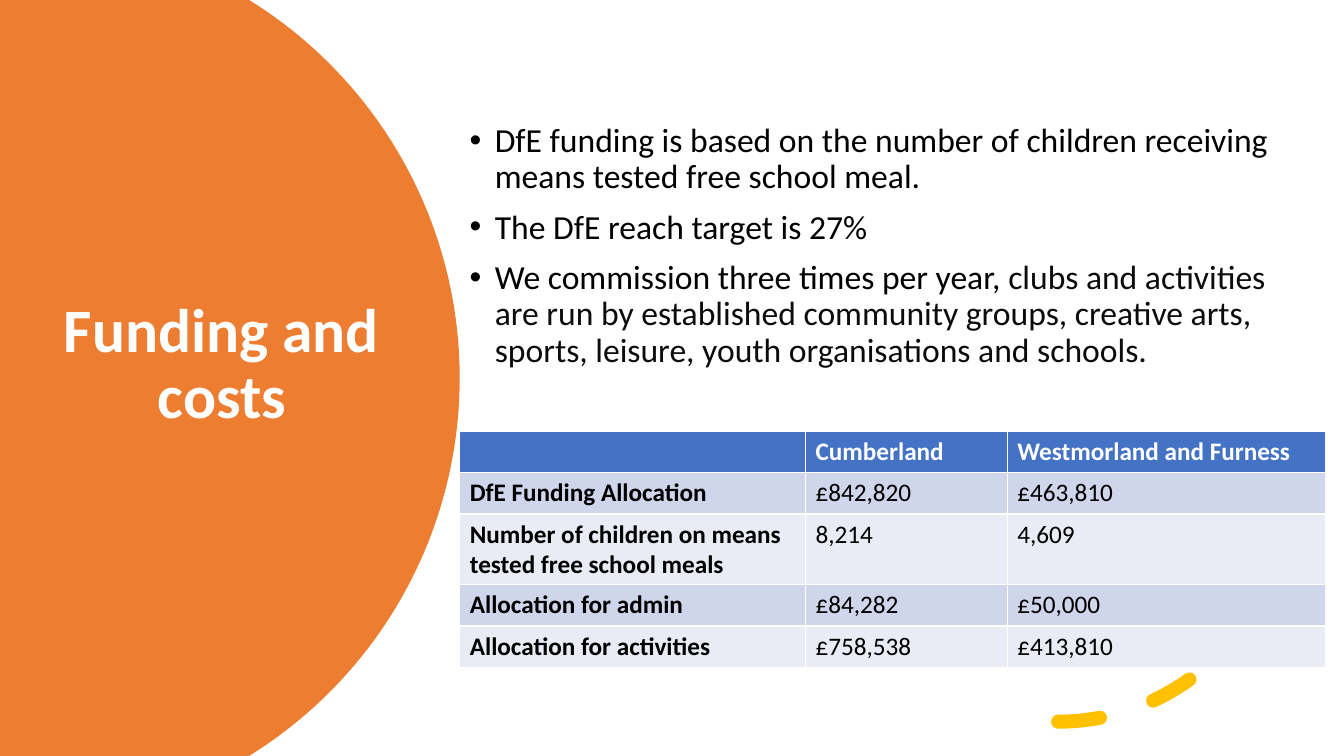
from math import asin, cos, sin

from lxml.etree import SubElement
from pptx import Presentation
from pptx.dml.color import RGBColor
from pptx.enum.dml import MSO_LINE_DASH_STYLE as Dash
from pptx.enum.shapes import MSO_SHAPE as Shape
from pptx.enum.text import MSO_ANCHOR as Anchor, PP_ALIGN as Align
from pptx.oxml.ns import qn
from pptx.util import Inches, Pt

TITLE = "Funding and costs"
POINTS = [
    [("DfE funding is based on the number of children receiving means tested free school meal.", "000000")],
    [("The DfE reach target is 27%", "000000")],
    [("We commission three times per year, ", "000000"),
     ("clubs and activities are run by established community groups, creative arts, "
      "sports, leisure, youth organisations and schools.", "0B0C0C")],
]
FUNDING = [
    ("", "Cumberland", "Westmorland and Furness"),
    ("DfE Funding Allocation", "£842,820", "£463,810"),
    ("Number of children on means tested free school meals", "8,214", "4,609"),
    ("Allocation for admin", "£84,282", "£50,000"),
    ("Allocation for activities", "£758,538", "£413,810"),
]
COLUMN_WIDTHS = [3.43, 2, 3.16]
ROW_HEIGHTS = [0.41, 0.41, 0.68, 0.41, 0.41]
HEADER_FILL, BAND_FILLS = "4472C4", ("E9EBF5", "CFD5EA")
WIDTH, HEIGHT = 13.33, 7.5
DISC_CENTRE, DISC_RADIUS, DISC_STEPS = 0.15, 4.41, 90


def colour(hex_code):
    return RGBColor.from_string(hex_code)


def paint(fill, hex_code):
    fill.solid()
    fill.fore_color.rgb = colour(hex_code)


def apply(target, formats):
    for name, value in formats.items():
        setattr(target, name, value)


def add_run(paragraph, text, size, hex_code, bold=False):
    run = paragraph.add_run()
    run.text = text
    apply(run.font, {"name": "Calibri", "size": Pt(size), "bold": bold})
    run.font.color.rgb = colour(hex_code)


def add_frame(slide, box, formats):
    frame = slide.shapes.add_textbox(*map(Inches, box)).text_frame
    apply(frame, {"word_wrap": True, "vertical_anchor": Anchor.MIDDLE, **formats})
    return frame


def add_disc(slide):
    half = asin(HEIGHT / 2 / DISC_RADIUS)
    angles = [half * (2 * step / DISC_STEPS - 1) for step in range(DISC_STEPS + 1)]
    rim = [(Inches(DISC_CENTRE + DISC_RADIUS * cos(a)),
            Inches(HEIGHT / 2 + DISC_RADIUS * sin(a))) for a in angles]
    outline = slide.shapes.build_freeform(0, 0)
    outline.add_line_segments(rim + [(0, Inches(HEIGHT))], close=True)
    disc = outline.convert_to_shape()
    disc.shadow.inherit = False
    paint(disc.fill, "ED7D31")
    disc.line.fill.background()


def add_title(slide):
    frame = add_frame(slide, (0.45, 2.58, 3.5, 4.1), {"margin_bottom": Inches(2.06)})
    heading = frame.paragraphs[0]
    apply(heading, {"alignment": Align.CENTER, "line_spacing": 0.9})
    add_run(heading, TITLE, 44, "FFFFFF", True)


def add_dashed_arc(slide):
    arc = slide.shapes.add_shape(Shape.ARC, *map(Inches, (8.26, 2.69, 4.47, 4.47)))
    arc.shadow.inherit = False
    arc.fill.background()
    paint(arc.line.fill, "FFC000")
    apply(arc.line, {"width": Pt(10), "dash_style": Dash.DASH})
    arc.element.spPr.find(qn("a:ln")).set("cap", "rnd")
    arc.element.spPr.find(qn("a:xfrm")).set("flipV", "1")


def add_points(slide):
    frame = add_frame(slide, (4.56, 0.16, 8.17, 4.51), {"margin_top": Inches(0.11)})
    for index, parts in enumerate(POINTS):
        point = frame.add_paragraph() if index else frame.paragraphs[0]
        apply(point, {"line_spacing": 0.9, "space_before": Pt(10)})
        for text, hex_code in parts:
            add_run(point, text, 24, hex_code)
        properties = point._p.get_or_add_pPr()
        properties.set("marL", str(Inches(0.25)))
        properties.set("indent", str(Inches(-0.25)))
        SubElement(properties, qn("a:buFont")).set("typeface", "Arial")
        SubElement(properties, qn("a:buChar")).set("char", "•")


def add_funding(slide):
    box = (4.56, 4.28, sum(COLUMN_WIDTHS), sum(ROW_HEIGHTS))
    table = slide.shapes.add_table(
        len(FUNDING), len(COLUMN_WIDTHS), *map(Inches, box)).table
    for column, width in zip(table.columns, COLUMN_WIDTHS):
        column.width = Inches(width)
    for r, (row, height) in enumerate(zip(FUNDING, ROW_HEIGHTS)):
        table.rows[r].height = Inches(height)
        for c, text in enumerate(row):
            cell = table.cell(r, c)
            paint(cell.fill, BAND_FILLS[r % 2] if r else HEADER_FILL)
            if text:
                add_run(cell.text_frame.paragraphs[0], text, 18,
                        "000000" if r else "FFFFFF", r == 0 or c == 0)


def main():
    deck = Presentation()
    apply(deck, {"slide_width": Inches(WIDTH), "slide_height": Inches(HEIGHT)})
    slide = deck.slides.add_slide(deck.slide_layouts[6])
    for add_part in (add_disc, add_title, add_dashed_arc, add_points, add_funding):
        add_part(slide)
    deck.save("out.pptx")


if __name__ == "__main__":
    main()
